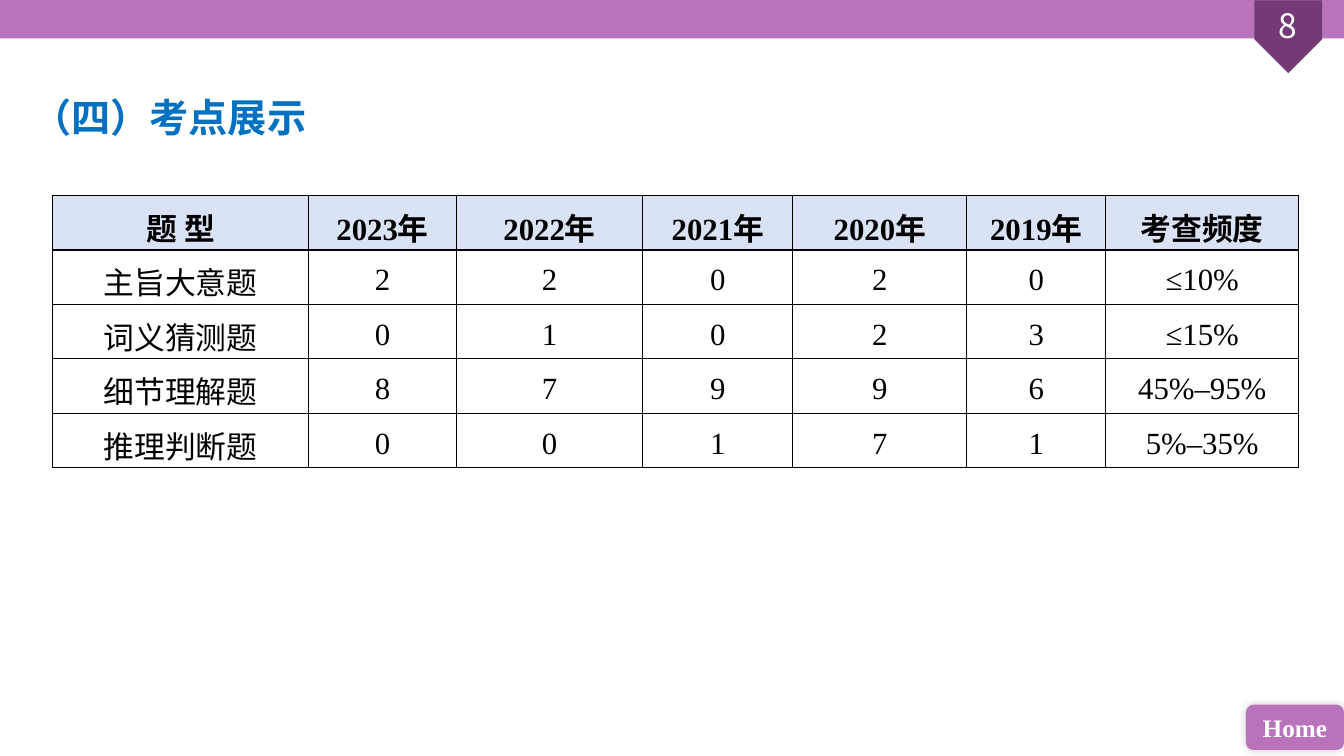
import pptx
import pptx.util
import pptx.dml.color
import pptx.enum.shapes
import pptx.enum.text
import pptx.oxml
import pptx.oxml.ns
from lxml import etree

HUES = {"bar": "B873BB", "flag": "743A78", "title": "0070C0", "head": "DAE3F5",
        "ink": "000000", "white": "FFFFFF"}
KIND = pptx.enum.shapes.MSO_SHAPE
ALIGN = pptx.enum.text.PP_ALIGN
MID = pptx.enum.text.MSO_ANCHOR.MIDDLE
TAG = pptx.oxml.ns.qn
CJK = "Noto Sans CJK SC"


def rgb(name):
    return pptx.dml.color.RGBColor.from_string(HUES[name])


def assign(item, values):
    for key, value in values.items():
        setattr(item, key, value)


class Page:
    """Draws on one slide; all lengths are percent of its width or height."""

    def __init__(self, deck):
        self.deck = deck
        self.slide = deck.slides.add_slide(deck.slide_layouts[6])

    def wide(self, share):
        return round(self.deck.slide_width * share / 100)

    def high(self, share):
        return round(self.deck.slide_height * share / 100)

    def box(self, left, top, width, height):
        return self.wide(left), self.high(top), self.wide(width), self.high(height)

    def label(self, frame, text, hue, font, align=ALIGN.CENTER, gap=None):
        para = frame.paragraphs[0]
        assign(para, {"alignment": align, "line_spacing": gap})
        run = para.add_run()
        run.text = text
        assign(run.font, font)
        run.font.color.rgb = rgb(hue)
        east = etree.SubElement(run.font._element, TAG("a:ea"))
        east.set("typeface", CJK)

    def shape(self, kind, place, hue, turn=0):
        item = self.slide.shapes.add_shape(kind, *self.box(*place))
        item.fill.solid()
        item.fill.fore_color.rgb = rgb(hue)
        item.line.fill.background()
        item.shadow.inherit = False
        item.rotation = turn
        return item

    def glow(self, item, blur, alpha):
        effect = item._element.spPr.find(TAG("a:effectLst"))
        cast = etree.SubElement(effect, TAG("a:outerShdw"), dir="18900000", dist="0",
                                blurRad=str(pptx.util.Pt(blur)))
        tint = etree.SubElement(cast, TAG("a:srgbClr"), val=HUES["ink"])
        etree.SubElement(tint, TAG("a:alpha"), val=str(alpha * 1000))

    def text(self, place, text, hue, font, align):
        item = self.slide.shapes.add_textbox(*self.box(*place))
        item.text_frame.word_wrap = True
        self.label(item.text_frame, text, hue, font, align)

    def edge(self, cell):
        props = cell._tc.get_or_add_tcPr()
        for side in ("lnL", "lnR", "lnT", "lnB"):
            line = etree.SubElement(props, TAG("a:" + side), w=str(pptx.util.Pt(1)))
            fill = etree.SubElement(line, TAG("a:solidFill"))
            etree.SubElement(fill, TAG("a:srgbClr"), val=HUES["ink"])

    def table(self, left, top, cols, row, data, font):
        place = self.box(left, top, sum(cols), row * len(data))
        grid = self.slide.shapes.add_table(len(data), len(cols), *place).table
        assign(grid, {"first_row": False, "horz_banding": False})
        for col, share in zip(grid.columns, cols):
            col.width = self.wide(share)
        for r, line in enumerate(data):
            grid.rows[r].height = self.high(row)
            for c, text in enumerate(line):
                cell = grid.cell(r, c)
                assign(cell, {"margin_top": 0, "margin_bottom": 0, "vertical_anchor": MID})
                self.edge(cell)
                if r == 0:
                    cell.fill.solid()
                    cell.fill.fore_color.rgb = rgb("head")
                else:
                    cell.fill.background()
                self.label(cell.text_frame, text, "ink", {**font, "bold": r == 0}, gap=1.2)


def main():
    deck = pptx.Presentation()
    assign(deck, {"slide_width": pptx.util.Inches(13.33),
                  "slide_height": pptx.util.Inches(7.5)})
    page = Page(deck)
    serif = {"name": "Times New Roman"}

    # Top bar and page flag
    page.shape(KIND.RECTANGLE, (0, 0, 100, 5.07), "bar")
    page.shape(KIND.PENTAGON, (93.15, 0.4, 5.4, 8.93), "flag", 90)
    page.text((92.18, 0, 7.35, 6.67), "8", "white",
              {"name": CJK, "size": pptx.util.Pt(24)}, ALIGN.CENTER)

    # Home button
    home = page.shape(KIND.ROUNDED_RECTANGLE, (92.7, 93.2, 7.3, 6), "bar")
    page.glow(home, 6, 20)
    home.text_frame.vertical_anchor = MID
    page.label(home.text_frame, "Home", "white",
               {**serif, "size": pptx.util.Pt(18), "bold": True})

    # Heading
    page.text((1.65, 11.73, 38.63, 7.6), "（四）考点展示", "title",
              {"name": "Calibri", "size": pptx.util.Pt(28), "bold": True}, ALIGN.LEFT)

    # Question types by year
    data = [
        ["题 型", *(f"{year}年" for year in range(2023, 2018, -1)), "考查频度"],
        ["主旨大意题", *"22020", "≤10%"],
        ["词义猜测题", *"01023", "≤15%"],
        ["细节理解题", *"87996", "45%–95%"],
        ["推理判断题", *"00171", "5%–35%"],
    ]
    cols = [19.08, 10.97, 13.88, 11.16, 12.95, 10.34, 14.36]
    page.table(3.9, 25.87, cols, 7.2, data, {**serif, "size": pptx.util.Pt(22)})

    deck.save("out.pptx")


if __name__ == "__main__":
    main()
